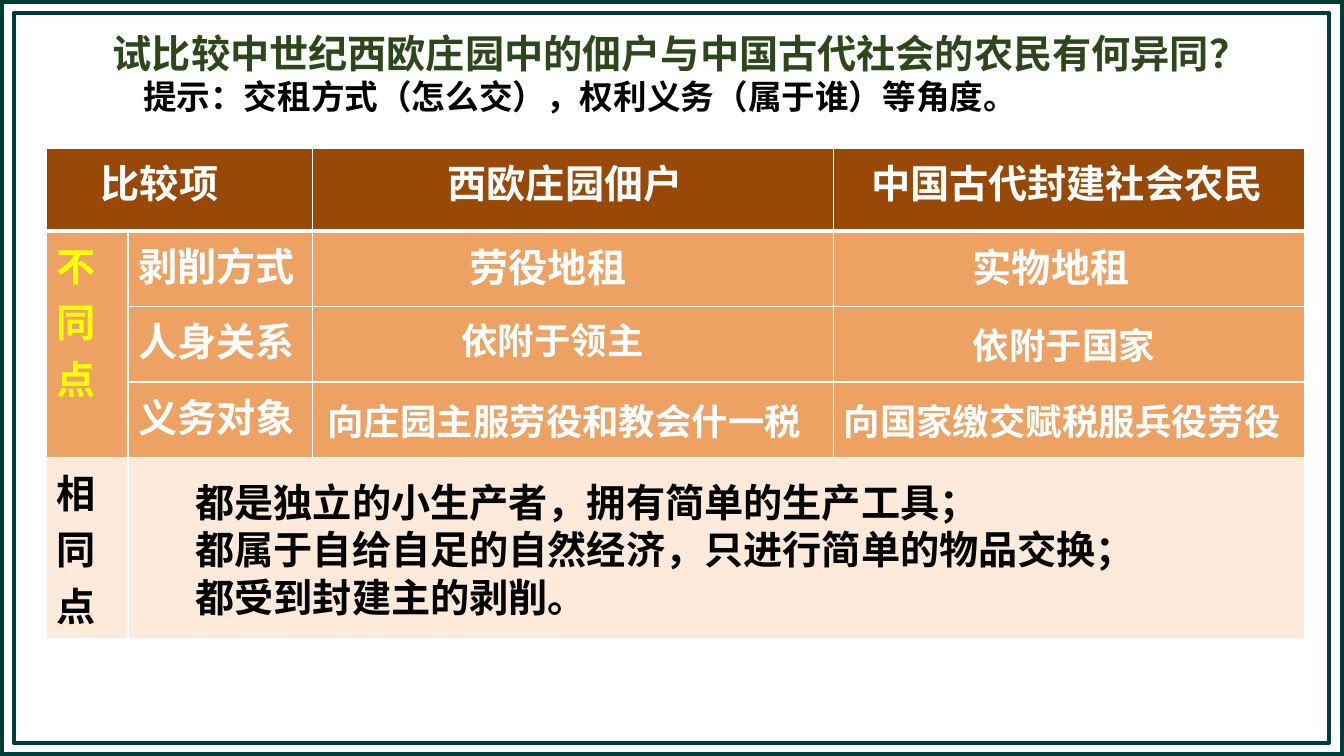
from lxml import etree
from pptx import Presentation
from pptx.dml.color import RGBColor
from pptx.enum import shapes, text
from pptx.oxml import parse_xml
from pptx.oxml.ns import nsdecls, qn
from pptx.util import Inches, Pt

JP, SC = "Noto Sans CJK JP", "Noto Sans CJK SC"
WHITE = RGBColor(0xFF, 0xFF, 0xFF)
BLACK = RGBColor(0, 0, 0)
YELLOW = RGBColor(0xFF, 0xFF, 0)
FRAME = RGBColor(0, 0x3D, 0x38)
TITLE = RGBColor(0x2E, 0x46, 0x1C)
BROWN = RGBColor(0x98, 0x48, 0x07)
ORANGE = RGBColor(0xE4, 0x6C, 0x0A)
CREAM = RGBColor(0xFD, 0xEA, 0xDA)


def style(paragraph, size, font, color):
    paragraph.font.size = Pt(size)
    paragraph.font.bold = True
    paragraph.font.color.rgb = color
    paragraph.font.name = font
    defaults = paragraph._p.pPr.find(qn("a:defRPr"))
    etree.SubElement(defaults, qn("a:ea")).set("typeface", font)


def add_text(left, top, width, height, lines):
    frame = slide.shapes.add_textbox(
        Inches(left), Inches(top), Inches(width), Inches(height)).text_frame
    frame.word_wrap = True
    for i, (words, size, font, color) in enumerate(lines):
        paragraph = frame.paragraphs[0] if i == 0 else frame.add_paragraph()
        paragraph.text = words
        style(paragraph, size, font, color)
    return frame


prs = Presentation()
prs.slide_width, prs.slide_height = Inches(13.33), Inches(7.5)
slide = prs.slides.add_slide(prs.slide_layouts[6])

for left, top, width, height, weight in [(0, 0, 13.33, 7.5, 6), (0.14, 0.13, 13.04, 7.24, 3.25)]:
    border = slide.shapes.add_shape(
        shapes.MSO_SHAPE.RECTANGLE, Inches(left), Inches(top), Inches(width), Inches(height))
    border.shadow.inherit = False
    border.fill.background()
    border.line.color.rgb = FRAME
    border.line.width = Pt(weight)

heading = add_text(1.02, 0.24, 12.31, 0.97, [
    ("试比较中世纪西欧庄园中的佃户与中国古代社会的农民有何异同？", 28, JP, TITLE),
    ("提示：交租方式（怎么交），权利义务（属于谁）等角度。", 24, SC, BLACK),
])
heading.paragraphs[1]._p.pPr.set("marL", str(Inches(0.3)))

comparison = slide.shapes.add_table(
    5, 4, Inches(0.46), Inches(1.47), Inches(12.48), Inches(4.87)).table
comparison.first_row = comparison.horz_banding = False
for column, width in zip(comparison.columns, [0.81, 1.83, 5.17, 4.67]):
    column.width = Inches(width)
for row, height in zip(comparison.rows, [0.82, 0.75, 0.75, 0.75, 1.8]):
    row.height = Inches(height)

row_fills = [BROWN, ORANGE, ORANGE, ORANGE, CREAM]
for r, fill in enumerate(row_fills):
    for cell in comparison.rows[r].cells:
        cell.fill.solid()
        cell.fill.fore_color.rgb = fill
        properties = cell._tc.get_or_add_tcPr()
        if fill == ORANGE:
            tint = properties.find(".//" + qn("a:srgbClr"))
            etree.SubElement(tint, qn("a:alpha")).set("val", "64000")
        for i, side in enumerate("LRTB"):
            thick = (r, side) in [(0, "B"), (1, "T")]
            properties.insert(i, parse_xml(
                f'<a:ln{side} {nsdecls("a")} w="{Pt(3 if thick else 1)}">'
                f'<a:solidFill><a:srgbClr val="{WHITE}"/></a:solidFill></a:ln{side}>'))

for first, last in [((0, 0), (0, 1)), ((1, 0), (3, 0)), ((4, 1), (4, 3))]:
    comparison.cell(*first).merge(comparison.cell(*last))

for r, c, words, font, color, margin in [
    (0, 0, "比较项", JP, WHITE, 0.54),
    (0, 2, "西欧庄园佃户", JP, WHITE, 1.34),
    (0, 3, "中国古代封建社会农民", JP, WHITE, 0.37),
    (1, 0, "不同点", SC, YELLOW, 0.1),
    (1, 1, "剥削方式", SC, WHITE, 0.1),
    (2, 1, "人身关系", SC, WHITE, 0.1),
    (3, 1, "义务对象", SC, WHITE, 0.1),
    (4, 0, "相同点", JP, BLACK, 0.1),
]:
    cell = comparison.cell(r, c)
    cell.text = words
    cell.margin_left = Inches(margin)
    cell.vertical_anchor = text.MSO_ANCHOR.TOP
    style(cell.text_frame.paragraphs[0], 28, font, color)

for left, top, width, height, size, answer in [
    (4.56, 2.36, 2.28, 0.57, 28, "劳役地租"),
    (9.55, 2.36, 2.28, 0.57, 28, "实物地租"),
    (4.48, 3.11, 2.73, 0.54, 26, "依附于领主"),
    (9.55, 3.16, 2.81, 0.54, 26, "依附于国家"),
    (3.15, 3.91, 5.25, 0.54, 26, "向庄园主服劳役和教会什一税"),
    (8.27, 3.91, 5.12, 0.54, 26, "向国家缴交赋税服兵役劳役"),
]:
    add_text(left, top, width, height, [(answer, size, SC, WHITE)])

similarities = [
    "都是独立的小生产者，拥有简单的生产工具；",
    "都属于自给自足的自然经济，只进行简单的物品交换；",
    "都受到封建主的剥削。",
]
add_text(1.84, 4.7, 10.36, 1.51, [(point, 28, SC, BLACK) for point in similarities])

prs.save("out.pptx")
